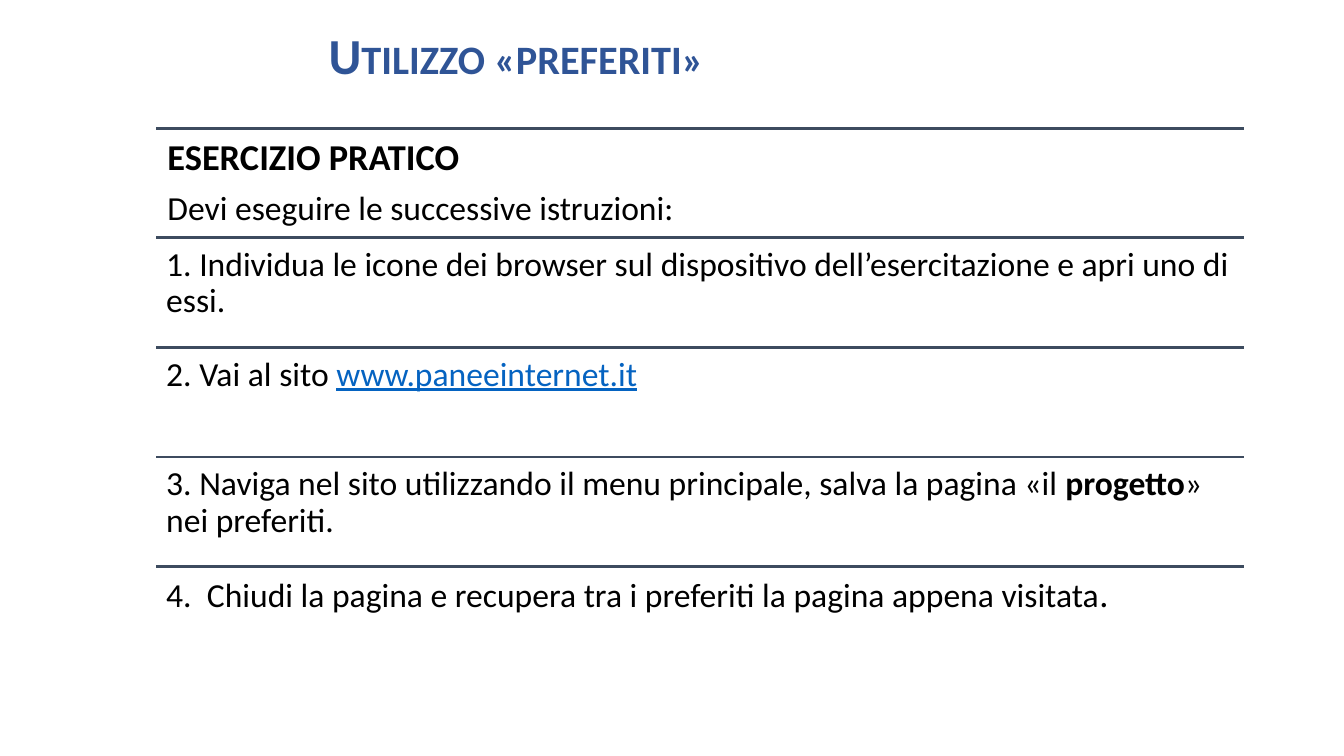
from lxml import etree
from pptx import Presentation
from pptx import util as u
from pptx.dml.color import RGBColor
from pptx.enum import shapes, text
from pptx.oxml.ns import qn

BLACK, RULE, HEADING, LINK = "000000", "3D4B5F", "2F5496", "0563C1"
BODY = {"size": u.Pt(24), "bold": False, "underline": False, "name": "Calibri"}

EXERCISE = [
    [
        [("ESERCIZIO PRATICO", {"size": u.Pt(26), "bold": True})],
        [("Devi eseguire le successive istruzioni:", {})],
    ],
    [[("1. Individua le icone dei browser sul dispositivo dell’esercitazione e apri uno di essi.", {})]],
    [[("2. Vai al sito ", {}), ("www.paneeinternet.it", {"underline": True, "color": LINK})]],
    [[
        ("3. Naviga nel sito utilizzando il menu principale, salva la pagina «il ", {}),
        ("progetto", {"bold": True}),
        ("» nei preferiti.", {}),
    ]],
    [[
        ("4.  Chiudi la pagina e recupera tra i preferiti la pagina appena visitata", {}),
        (".", {"size": u.Pt(26)}),
    ]],
]


def rgb(value):
    """Return the colour for a hex string."""
    return RGBColor.from_string(value)


def apply(target, values):
    """Set each named attribute on the target."""
    for name, value in values.items():
        setattr(target, name, value)


def add_words(paragraph, words, changes):
    """Append a run in the body format with the given changes."""
    run = paragraph.add_run()
    run.text = words
    style = {**BODY, "color": BLACK, **changes}
    run.font.color.rgb = rgb(style.pop("color"))
    apply(run.font, style)
    return run


def add_heading(slide, left, top, width, height):
    """Place the small-caps heading in the title placeholder."""
    heading = slide.shapes.title
    apply(heading, {"left": left, "top": top, "width": width, "height": height})
    frame = heading.text_frame
    apply(frame, {
        "margin_left": u.Cm(4.39), "margin_right": u.Cm(0.33),
        "margin_top": u.Cm(0.18), "margin_bottom": u.Cm(0.18),
        "vertical_anchor": text.MSO_ANCHOR.MIDDLE,
        "auto_size": text.MSO_AUTO_SIZE.NONE, "word_wrap": True,
    })
    paragraph = frame.paragraphs[0]
    apply(paragraph, {"alignment": text.PP_ALIGN.LEFT, "line_spacing": 0.9})
    run = add_words(paragraph, "Utilizzo «preferiti»",
                    {"size": u.Pt(36), "bold": True, "color": HEADING})
    run.font._element.set("cap", "small")


def add_rule(slide, left, top, width):
    """Draw a horizontal rule across the list."""
    rule = slide.shapes.add_connector(
        shapes.MSO_CONNECTOR.STRAIGHT, left, top, left + width, top)
    rule.line.color.rgb = rgb(RULE)
    rule.line.width = u.Pt(2)
    etree.SubElement(rule._element.spPr, qn("a:effectLst"))


def add_step(slide, paragraphs, inset, left, top, width, height):
    """Write one step of the exercise in its row."""
    frame = slide.shapes.add_textbox(left, top, width, height).text_frame
    apply(frame, {"word_wrap": True, "margin_left": inset, "margin_right": inset,
                  "margin_top": inset, "margin_bottom": inset})
    for index, pieces in enumerate(paragraphs):
        paragraph = frame.add_paragraph() if index else frame.paragraphs[0]
        paragraph.line_spacing = 0.9
        if index:
            paragraph.space_before = u.Pt(9.1)
        for words, changes in pieces:
            add_words(paragraph, words, changes)


def add_exercise(slide, left, top, width, height):
    """Stack the ruled steps in rows of equal height."""
    row_height = height // len(EXERCISE)
    for row, paragraphs in enumerate(EXERCISE):
        row_top = top + row * row_height
        inset = u.Cm(0.25 if row else 0.28)
        add_rule(slide, left, row_top, width)
        add_step(slide, paragraphs, inset, left, row_top, width, row_height)


def main():
    """Build and save the slide."""
    deck = Presentation()
    apply(deck, {"slide_width": u.Cm(33.87), "slide_height": u.Cm(19.05)})
    slide = deck.slides.add_slide(deck.slide_layouts[5])
    add_heading(slide, u.Cm(3.89), u.Cm(-0.38), u.Cm(20.96), u.Cm(3.68))
    add_exercise(slide, u.Cm(3.94), u.Cm(3.23), u.Cm(27.41), u.Cm(13.81))
    deck.save("out.pptx")


if __name__ == "__main__":
    main()
